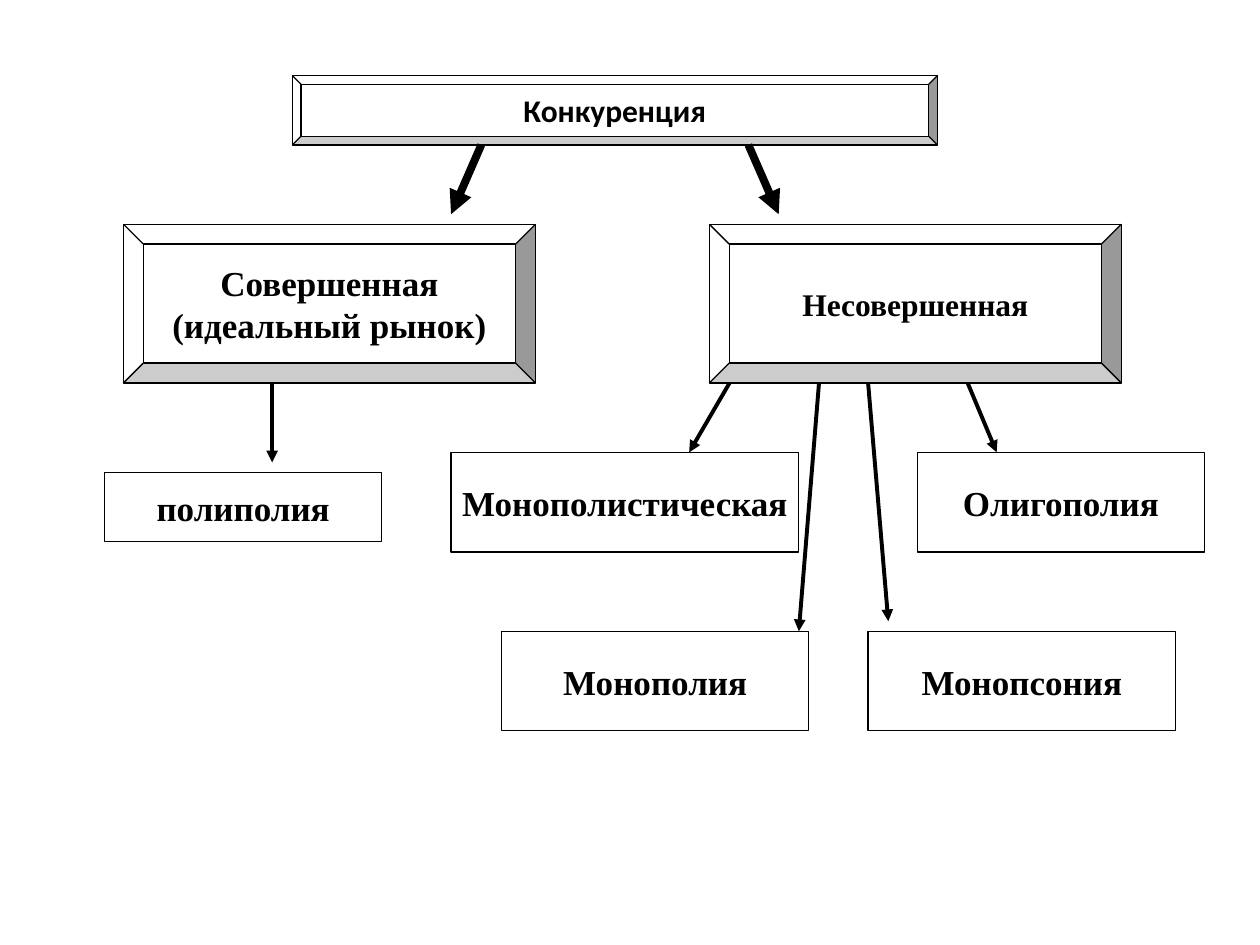
from dataclasses import dataclass

from lxml.etree import SubElement
from pptx import Presentation
from pptx.dml.color import RGBColor
from pptx.enum.shapes import MSO_CONNECTOR, MSO_SHAPE
from pptx.enum.text import MSO_ANCHOR, PP_ALIGN
from pptx.oxml.ns import qn
from pptx.util import Inches, Pt


@dataclass(frozen=True)
class Theme:
    ink: RGBColor = RGBColor(0, 0, 0)
    paper: RGBColor = RGBColor(255, 255, 255)
    title_font: str = "Calibri"
    body_font: str = "Times New Roman"
    heading_size: int = 18
    body_size: int = 20
    outline: float = 0.75
    thick_arrow: float = 4.5
    thin_arrow: float = 2.25


def write_text(frame, text, *, font, size, color, bold=True):
    frame.word_wrap = False
    frame.vertical_anchor = MSO_ANCHOR.MIDDLE
    for index, line in enumerate(text.split("\n")):
        para = frame.add_paragraph() if index else frame.paragraphs[0]
        para.alignment = PP_ALIGN.CENTER
        span = para.add_run()
        span.text = line
        span.font.name = font
        span.font.size = Pt(size)
        span.font.bold = bold
        span.font.color.rgb = color


class Diagram:
    def __init__(self, page, theme):
        self.page = page
        self.theme = theme

    def box(self, text, left, top, width, height, *,
            preset=MSO_SHAPE.RECTANGLE, font=None, size=None):
        theme = self.theme
        box = self.page.shapes.add_shape(
            preset, Inches(left), Inches(top), Inches(width), Inches(height))
        box.shadow.inherit = False
        box.fill.solid()
        box.fill.fore_color.rgb = theme.paper
        box.line.color.rgb = theme.ink
        box.line.width = Pt(theme.outline)
        write_text(box.text_frame, text, font=font or theme.body_font,
                   size=size or theme.body_size, color=theme.ink)

    def bevel(self, text, left, top, width, height, **text_format):
        self.box(text, left, top, width, height,
                 preset=MSO_SHAPE.BEVEL, **text_format)

    def arrow(self, start, end, weight):
        arrow = self.page.shapes.add_connector(
            MSO_CONNECTOR.STRAIGHT, *map(Inches, start + end))
        arrow.line.color.rgb = self.theme.ink
        arrow.line.width = Pt(weight)
        SubElement(arrow.line._get_or_add_ln(), qn("a:tailEnd"), type="triangle")
        SubElement(arrow._element.spPr, qn("a:effectLst"))


def main():
    deck = Presentation()
    deck.slide_width = Inches(10)
    deck.slide_height = Inches(7.5)
    page = deck.slides.add_slide(deck.slide_layouts[6])
    theme = Theme()
    diagram = Diagram(page, theme)

    title_top, title_height = 0.6, 0.55
    type_top, type_width, type_height = 1.78, 3.27, 1.26
    upper_top, lower_top, form_height = 3.59, 5.01, 0.79
    title_bottom = title_top + title_height
    type_bottom = type_top + type_height

    diagram.bevel("Конкуренция", 2.32, title_top, 5.12, title_height,
                  font=theme.title_font, size=theme.heading_size)
    diagram.bevel("Совершенная\n(идеальный рынок)",
                  0.98, type_top, type_width, type_height)
    diagram.bevel("Несовершенная", 5.63, type_top, type_width, type_height,
                  size=theme.heading_size)

    diagram.box("полиполия", 0.83, 3.75, 2.2, title_height)
    market_forms = [
        ("Монополистическая", 3.58, upper_top, 2.76),
        ("Олигополия", 7.28, upper_top, 2.28),
        ("Монополия", 3.98, lower_top, 2.44),
        ("Монопсония", 6.89, lower_top, 2.44),
    ]
    for name, left, top, width in market_forms:
        diagram.box(name, left, top, width, form_height)

    for start_x, end_x in [(3.82, 3.58), (5.94, 6.18)]:
        diagram.arrow((start_x, title_bottom), (end_x, 1.7), theme.thick_arrow)

    form_arrows = [
        (2.16, 2.16, 3.67),
        (5.79, 5.47, upper_top),
        (7.68, 7.91, upper_top),
        (6.5, 6.34, lower_top),
        (6.89, 7.05, 4.93),
    ]
    for start_x, end_x, end_y in form_arrows:
        diagram.arrow((start_x, type_bottom), (end_x, end_y), theme.thin_arrow)

    deck.save("out.pptx")


if __name__ == "__main__":
    main()
